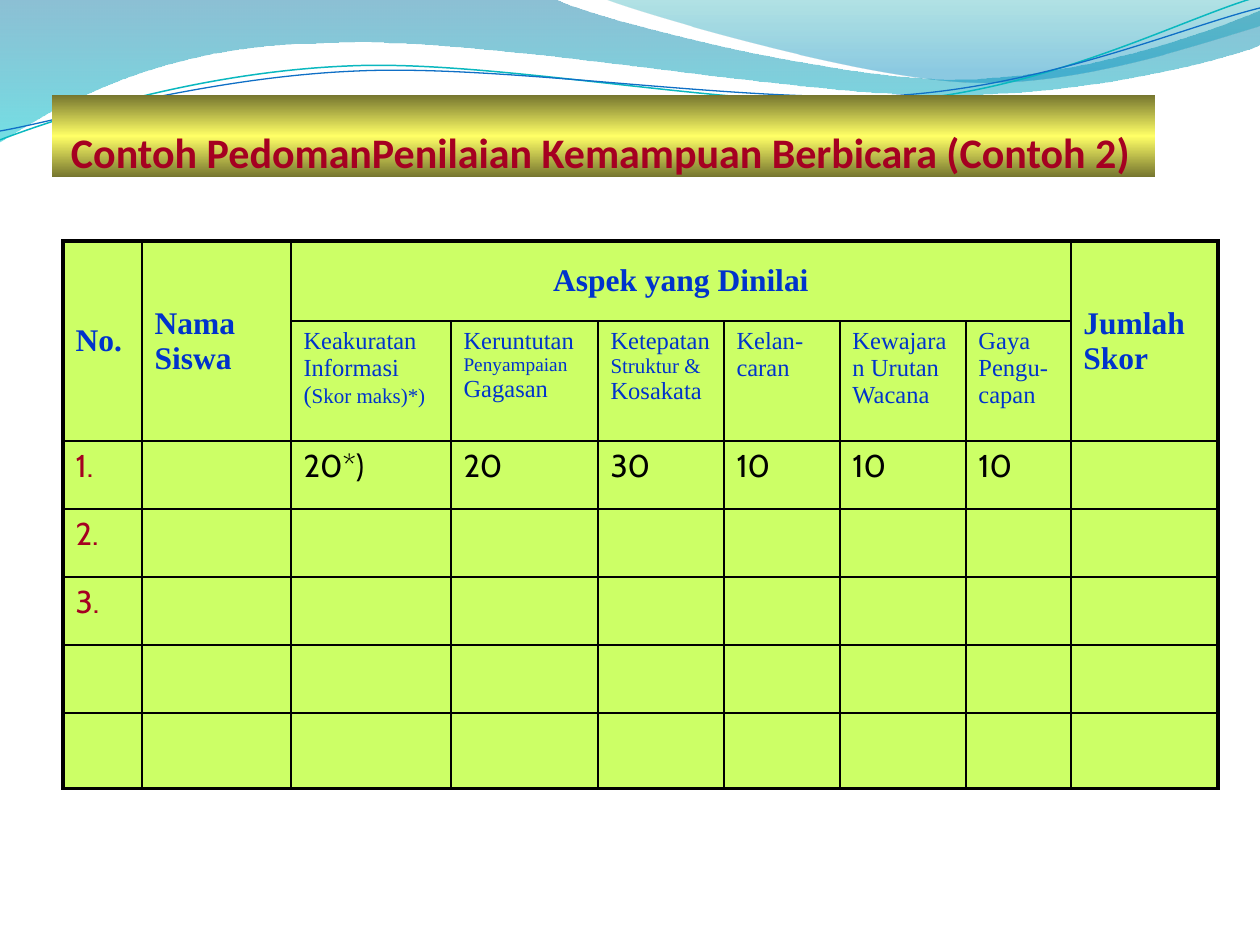
from math import cos, radians, sin

from lxml import etree
from pptx import Presentation
from pptx.dml.color import RGBColor
from pptx.enum.shapes import MSO_SHAPE
from pptx.enum.text import MSO_ANCHOR, PP_ALIGN
from pptx.oxml import parse_xml
from pptx.oxml.ns import qn
from pptx.util import Emu, Pt

MIDDLE, BOTTOM, TOP = MSO_ANCHOR.MIDDLE, MSO_ANCHOR.BOTTOM, MSO_ANCHOR.TOP
LEFT, CENTER = PP_ALIGN.LEFT, PP_ALIGN.CENTER
RECT = MSO_SHAPE.RECTANGLE
NS = "http://schemas.openxmlformats.org/drawingml/2006/main"
SCALE = 914400 / 126
TILT = 2.7

BLACK = RGBColor(0, 0, 0)
RED = RGBColor(0xA5, 0x00, 0x21)
BLUE = RGBColor(0x00, 0x33, 0xCC)
LIME = RGBColor(0xCC, 0xFF, 0x66)
OLIVE = RGBColor(0x76, 0x76, 0x2F)
YELLOW = RGBColor(0xFF, 0xFF, 0x66)
OCEAN = RGBColor(0x00, 0x74, 0xA1)
AQUA = RGBColor(0x00, 0xC6, 0xCF)
TEAL = RGBColor(0x00, 0xA1, 0xA9)
SKY = RGBColor(0x00, 0x8B, 0xBF)
CYAN = RGBColor(0x0A, 0xB8, 0xBF)
NAVY = RGBColor(0x0F, 0x6F, 0xC6)

WAVES = [
    ([[(0, -1)], [(554, -1)],
      [(600, 21), (837, 79), (955, 79)], [(1075, 79), (1207, 33), (1260, 11)],
      [(1261, 45)],
      [(1239, 55), (1096, 96), (940, 95)], [(783, 95), (481, 35), (324, 43)],
      [(163, 44), (58, 105), (-1, 142)]],
     [(0, OCEAN, 45), (100, AQUA, 55)]),
    ([[(604, -1)],
      [(641, 14), (859, 78), (969, 82)], [(1079, 87), (1211, 40), (1260, 26)],
      [(1260, 0)]],
     [(0, TEAL, 30), (80, SKY, 45)]),
]
CURVES = [
    ([[(0, 140)],
      [(60, 117), (199, 72), (349, 66)], [(499, 59), (747, 112), (898, 101)],
      [(1050, 89), (1182, 19), (1257, -3)]], (629, 72), CYAN, 0.85),
    ([[(0, 131)],
      [(59, 121), (207, 77), (357, 71)], [(508, 64), (752, 105), (903, 95)],
      [(1053, 84), (1186, 26), (1260, 8)]], (629, 74), NAVY, 0.75),
]

TITLE = "Contoh PedomanPenilaian Kemampuan Berbicara (Contoh 2)"
COLS = [79, 149, 160, 147, 126, 116, 126, 105, 147]
ROWS = [80, 120, 68, 68, 68, 68, 76]
HEADS = [
    (0, 0, 1, 0, "No.", LEFT),
    (0, 1, 1, 1, "Nama Siswa", LEFT),
    (0, 2, 0, 7, "Aspek yang Dinilai", CENTER),
    (0, 8, 1, 8, "Jumlah Skor", LEFT),
]
ASPECTS = [
    [("Keakuratan Informasi (", 14), ("Skor maks)*)", 12)],
    [("Keruntutan ", 14), ("Penyampaian ", 11), ("Gagasan", 14)],
    [("Ketepatan ", 14), ("Struktur & ", 12), ("Kosakata", 14)],
    [("Kelan-caran", 14)],
    [("Kewajaran Urutan Wacana", 14)],
    [("Gaya Pengu-capan", 14)],
]
SCORES = ["20*)", "20", "30", "10", "10", "10"]
NUMBERS = ["1.", "2.", "3."]


def px(n):
    return Emu(round(n * SCALE))


def blend(shape, stops):
    props = shape._element.spPr
    for tag in ("a:solidFill", "a:noFill", "a:gradFill"):
        for old in props.findall(qn(tag)):
            props.remove(old)
    marks = "".join(
        f'<a:gs pos="{pos * 1000}"><a:srgbClr val="{hue}">'
        f'<a:alpha val="{alpha * 1000}"/></a:srgbClr></a:gs>'
        for pos, hue, alpha in stops)
    grad = parse_xml(f'<a:gradFill xmlns:a="{NS}" rotWithShape="1"><a:gsLst>{marks}</a:gsLst>'
                     '<a:lin ang="5400000" scaled="0"/></a:gradFill>')
    geom = props.find(qn("a:custGeom"))
    if geom is None:
        geom = props.find(qn("a:prstGeom"))
    geom.addnext(grad)
    shape.line.fill.background()


def turn(parts, pivot):
    a, b = pivot
    c, s = cos(radians(TILT)), sin(radians(TILT))
    return [[(a + (x - a) * c - (y - b) * s, b + (x - a) * s + (y - b) * c)
             for x, y in part] for part in parts]


def draw(parts, close):
    first, *rest = [(px(x), px(y)) for part in parts for x, y in part]
    pen = slide.shapes.build_freeform(*first)
    pen.add_line_segments(rest, close=close)
    shape = pen.convert_to_shape()
    shape.shadow.inherit = False
    lines = iter(list(shape._element.iter(qn("a:lnTo"))))
    for part in parts[1:]:
        group = [next(lines) for _ in part]
        if len(group) == 3:
            bend = etree.Element(qn("a:cubicBezTo"))
            group[0].addprevious(bend)
            for line in group:
                bend.append(line[0])
                line.getparent().remove(line)
    return shape


def write(frame, runs, face, hue, bold=False, align=LEFT):
    para = frame.paragraphs[0]
    para.alignment = align
    for text, size in runs:
        run = para.add_run()
        run.text = text
        font = run.font
        font.name, font.size, font.bold = face, Pt(size), bold
        font.color.rgb = hue


def border(cell, row, col):
    outer = [col == 0, col == len(COLS) - 1, row == 0, row == len(ROWS) - 1]
    props = cell._tc.get_or_add_tcPr()
    for i, (side, edge) in enumerate(zip("LRTB", outer)):
        line = etree.Element(qn(f"a:ln{side}"), w=str(Pt(2.25 if edge else 1)))
        fill = etree.SubElement(line, qn("a:solidFill"))
        etree.SubElement(fill, qn("a:srgbClr"), val=str(BLACK))
        props.insert(i, line)


deck = Presentation()
deck.slide_width, deck.slide_height = px(1260), px(945)
slide = deck.slides.add_slide(deck.slide_layouts[6])

for parts, stops in WAVES:
    blend(draw(parts, True), stops)
for parts, pivot, hue, width in CURVES:
    curve = draw(turn(parts, pivot), False)
    curve.rotation = -TILT
    curve.fill.background()
    curve.line.color.rgb = hue
    curve.line.width = Pt(width)

band = slide.shapes.add_shape(RECT, px(52), px(95), px(1103), px(82))
band.shadow.inherit = False
blend(band, [(0, OLIVE, 100), (50, YELLOW, 100), (100, OLIVE, 100)])
frame = band.text_frame
frame.word_wrap = True
frame.vertical_anchor = BOTTOM
frame.margin_left, frame.margin_top = px(19), px(6)
frame.margin_right = frame.margin_bottom = 0
write(frame, [(TITLE, 24)], "Calibri", RED, True)

table = slide.shapes.add_table(len(ROWS), len(COLS), px(63), px(241),
                               px(sum(COLS)), px(sum(ROWS))).table
table.first_row = table.horz_banding = False
for col, width in zip(table.columns, COLS):
    col.width = px(width)
for row, height in zip(table.rows, ROWS):
    row.height = px(height)
for r in range(len(ROWS)):
    for c in range(len(COLS)):
        cell = table.cell(r, c)
        cell.fill.solid()
        cell.fill.fore_color.rgb = LIME
        cell.vertical_anchor = TOP
        border(cell, r, c)

for top, left, low, right, text, align in HEADS:
    cell = table.cell(top, left)
    cell.merge(table.cell(low, right))
    cell.vertical_anchor = MIDDLE
    write(cell.text_frame, [(text, 18)], "Times New Roman", BLUE, True, align)
for c, (runs, score) in enumerate(zip(ASPECTS, SCORES), 2):
    write(table.cell(1, c).text_frame, runs, "Times New Roman", BLUE)
    write(table.cell(2, c).text_frame, [(score, 18)], "Cabin", BLACK)
for r, text in enumerate(NUMBERS, 2):
    write(table.cell(r, 0).text_frame, [(text, 18)], "Cabin", RED)

deck.save("out.pptx")
